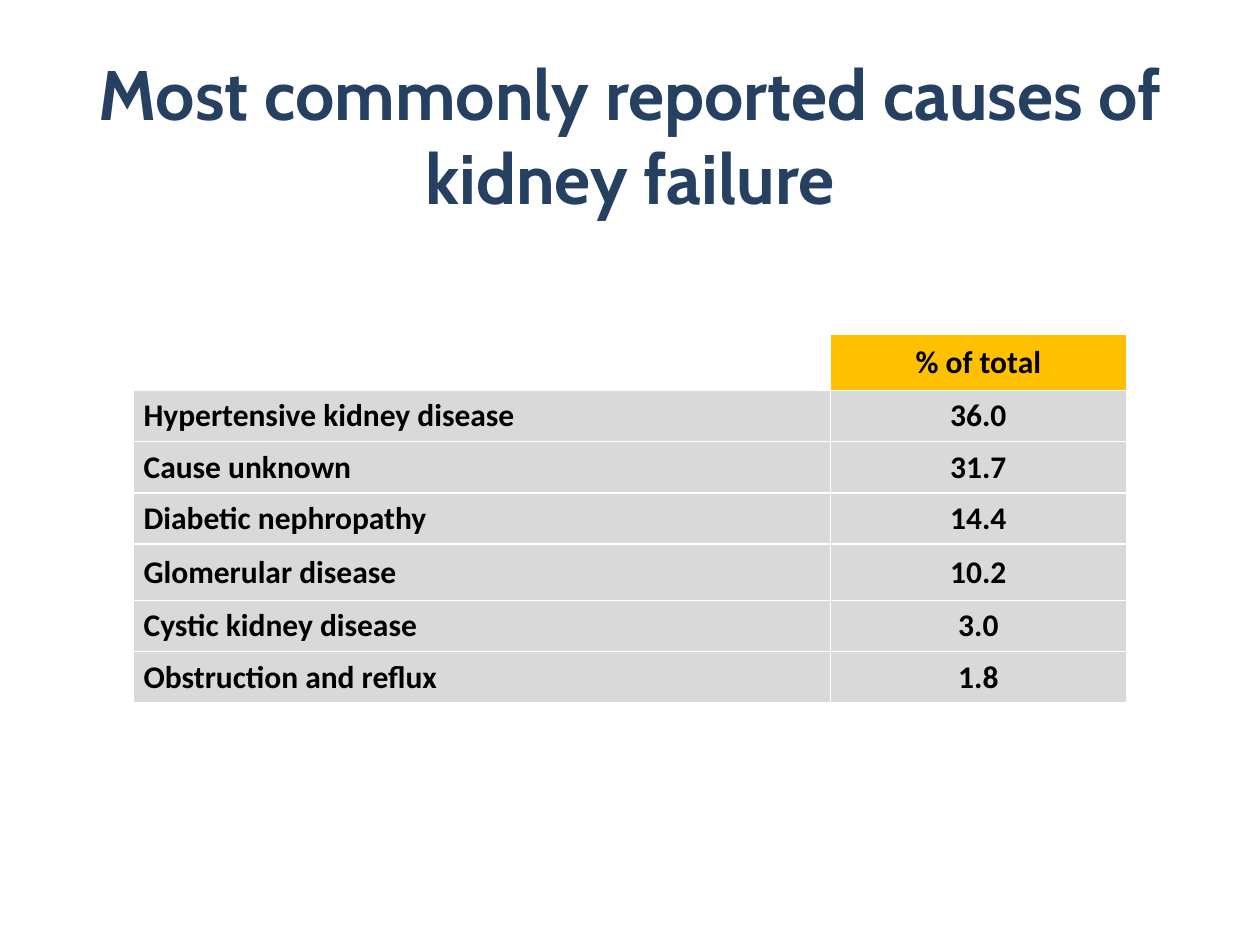
import pptx
import pptx.dml.color
import pptx.enum.text
import pptx.util
from pptx.util import Inches

TITLE = "Most commonly reported causes of kidney failure"
HEADER = ("", "% of total")
CAUSES = [
    ("Hypertensive kidney disease", "36.0"),
    ("Cause unknown", "31.7"),
    ("Diabetic nephropathy", "14.4"),
    ("Glomerular disease", "10.2"),
    ("Cystic kidney disease", "3.0"),
    ("Obstruction and reflux", "1.8"),
]
COLORS = {"title": "254061", "text": "000000", "header": "FFC000", "body": "D9D9D9"}
COLUMN_WIDTHS = (5.53, 2.35)
ROW_HEIGHT = 0.4
TALL_ROW_HEIGHT = 0.45
TALL_ROWS = (0, 4)

ALIGN = pptx.enum.text.PP_ALIGN
MIDDLE = pptx.enum.text.MSO_ANCHOR.MIDDLE


def rgb(name):
    return pptx.dml.color.RGBColor.from_string(COLORS[name])


def format_paragraph(paragraph, font_name, size, color, alignment):
    paragraph.alignment = alignment
    paragraph.font.name = font_name
    paragraph.font.size = pptx.util.Pt(size)
    paragraph.font.bold = True
    paragraph.font.color.rgb = rgb(color)


def add_title(slide):
    title = slide.shapes.title
    title.left, title.top = Inches(0.59), Inches(0.44)
    title.width, title.height = Inches(8.82), Inches(1.25)
    title.text_frame.text = TITLE
    title.text_frame.vertical_anchor = MIDDLE
    format_paragraph(title.text_frame.paragraphs[0], "Cabin", 40, "title", ALIGN.CENTER)


def fill_cell(cell, text, fill, alignment):
    cell.vertical_anchor = MIDDLE
    cell.margin_left = cell.margin_right = Inches(0.08)
    if not text:
        cell.fill.background()
        return
    cell.fill.solid()
    cell.fill.fore_color.rgb = rgb(fill)
    cell.text = text
    format_paragraph(cell.text_frame.paragraphs[0], "Calibri", 18, "text", alignment)


def add_causes_table(slide):
    rows = [HEADER] + CAUSES
    heights = [TALL_ROW_HEIGHT if index in TALL_ROWS else ROW_HEIGHT
               for index in range(len(rows))]
    table = slide.shapes.add_table(
        len(rows), len(COLUMN_WIDTHS), Inches(1.06), Inches(2.65),
        Inches(sum(COLUMN_WIDTHS)), Inches(sum(heights))).table
    # The default table style draws the white grid and the thick header rule.
    table.horz_banding = False
    for column, width in zip(table.columns, COLUMN_WIDTHS):
        column.width = Inches(width)
    for row_index, (values, height) in enumerate(zip(rows, heights)):
        table.rows[row_index].height = Inches(height)
        fill = "header" if row_index == 0 else "body"
        for column_index, text in enumerate(values):
            alignment = ALIGN.CENTER if column_index else ALIGN.LEFT
            fill_cell(table.cell(row_index, column_index), text, fill, alignment)


def main():
    presentation = pptx.Presentation()
    presentation.slide_width, presentation.slide_height = Inches(10), Inches(7.5)
    slide = presentation.slides.add_slide(presentation.slide_layouts.get_by_name("Title Only"))
    add_title(slide)
    add_causes_table(slide)
    presentation.save("out.pptx")


if __name__ == "__main__":
    main()
